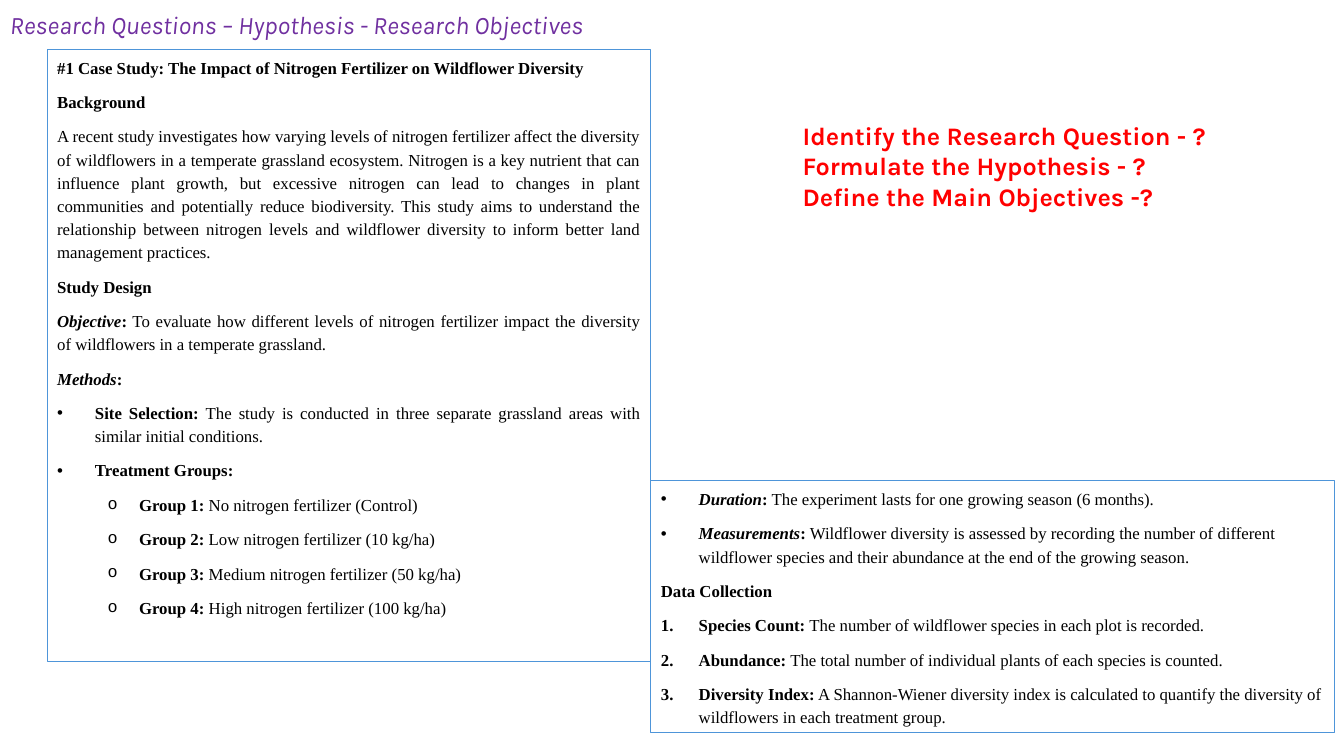
from lxml.etree import SubElement
from pptx import Presentation
from pptx.dml.color import RGBColor
from pptx.enum.shapes import MSO_SHAPE
from pptx.enum.text import MSO_ANCHOR, PP_ALIGN
from pptx.oxml.ns import qn
from pptx.util import Pt

PX = 9525
SERIF, SANS = "Times New Roman", "Karla"
STYLES = {"plain": (False, False), "bold": (True, False), "term": (True, True)}
MARKERS = {
    "dot": (36, 36, 0, "buChar", {"char": "•"}, "Arial"),
    "circle": (78, 30, 1, "buChar", {"char": "o"}, "Courier New"),
    "number": (36, 36, 0, "buAutoNum", {"type": "arabicPeriod"}, None),
}

CASE_STUDY = [
    (None, [("#1 Case Study: The Impact of Nitrogen Fertilizer on Wildflower Diversity", "bold")]),
    (None, [("Background", "bold")]),
    (None, [("A recent study investigates how varying levels of nitrogen fertilizer affect the "
             "diversity of wildflowers in a temperate grassland ecosystem. Nitrogen is a key "
             "nutrient that can influence plant growth, but excessive nitrogen can lead to changes "
             "in plant communities and potentially reduce biodiversity. This study aims to "
             "understand the relationship between nitrogen levels and wildflower diversity to "
             "inform better land management practices.", "plain")]),
    (None, [("Study Design", "bold")]),
    (None, [("Objective", "term"), (":", "bold"),
            (" To evaluate how different levels of nitrogen fertilizer impact the diversity of "
             "wildflowers in a temperate grassland.", "plain")]),
    (None, [("Methods", "term"), (":", "bold")]),
    ("dot", [("Site Selection:", "bold"),
             (" The study is conducted in three separate grassland areas with similar initial "
              "conditions.", "plain")]),
    ("dot", [("Treatment Groups:", "bold")]),
    ("circle", [("Group 1:", "bold"), (" No nitrogen fertilizer (Control)", "plain")]),
    ("circle", [("Group 2:", "bold"), (" Low nitrogen fertilizer (10 kg/ha)", "plain")]),
    ("circle", [("Group 3:", "bold"), (" Medium nitrogen fertilizer (50 kg/ha)", "plain")]),
    ("circle", [("Group 4:", "bold"), (" High nitrogen fertilizer (100 kg/ha)", "plain")]),
]

DATA_COLLECTION = [
    ("dot", [("Duration", "term"), (":", "bold"),
             (" The experiment lasts for one growing season (6 months).", "plain")]),
    ("dot", [("Measurements", "term"), (":", "bold"),
             (" Wildflower diversity is assessed by recording the number of different wildflower "
              "species and their abundance at the end of the growing season.", "plain")]),
    (None, [("Data Collection", "bold")]),
    ("number", [("Species Count:", "bold"),
                (" The number of wildflower species in each plot is recorded.", "plain")]),
    ("number", [("Abundance:", "bold"),
                (" The total number of individual plants of each species is counted.", "plain")]),
    ("number", [("Diversity Index:", "bold"),
                (" A Shannon-Wiener diversity index is calculated to quantify the diversity of "
                 "wildflowers in each treatment group.", "plain")]),
]

TASKS = [
    "Identify the Research Question - ?",
    "Formulate the Hypothesis - ?",
    "Define the Main Objectives -?",
]


def color(hex_string):
    """Turn a hex string into a colour."""
    return RGBColor.from_string(hex_string)


def scaled(box):
    """Turn a box in px into EMU."""
    return [length * PX for length in box]


def style_run(run, face, size, ink, bold=False, italic=False):
    """Set the font of one run."""
    font = run.font
    font.name, font.size, font.bold, font.italic = face, Pt(size), bold, italic
    font.color.rgb = color(ink)


def space(paragraph):
    """Give a paragraph the spacing of the body text."""
    paragraph.line_spacing = 1.15
    paragraph.space_after = Pt(8)


def mark(paragraph, marker):
    """Hang a bullet or number in front of a paragraph."""
    indent, hang, level, tag, attributes, face = MARKERS[marker]
    paragraph.level = level
    properties = paragraph._p.get_or_add_pPr()
    properties.set("marL", str(indent * PX))
    properties.set("indent", str(-hang * PX))
    if face:
        SubElement(properties, qn("a:buFont"), typeface=face)
    SubElement(properties, qn("a:" + tag), attributes)


def add_heading(slide, box):
    """Write the heading of the slide."""
    frame = slide.shapes.add_textbox(*scaled(box)).text_frame
    frame.word_wrap = True
    frame.text = "Research Questions – Hypothesis - Research Objectives"
    space(frame.paragraphs[0])
    style_run(frame.paragraphs[0].runs[0], SANS, 18, "7030A0", italic=True)


def add_panel(slide, box, entries, alignment):
    """Draw an outlined panel with its study notes."""
    panel = slide.shapes.add_shape(MSO_SHAPE.RECTANGLE, *scaled(box))
    panel.shadow.inherit = False
    panel.fill.background()
    panel.line.color.rgb = color("4E95D9")
    panel.line.width = Pt(0.75)
    frame = panel.text_frame
    frame.word_wrap = True
    frame.vertical_anchor = MSO_ANCHOR.TOP
    for index, (marker, pieces) in enumerate(entries):
        paragraph = frame.add_paragraph() if index else frame.paragraphs[0]
        paragraph.alignment = alignment
        space(paragraph)
        if marker:
            mark(paragraph, marker)
        for words, style in pieces:
            run = paragraph.add_run()
            run.text = words
            style_run(run, SERIF, 12, "000000", *STYLES[style])


def add_tasks(slide, box):
    """Write the tasks for the reader."""
    frame = slide.shapes.add_textbox(*scaled(box)).text_frame
    frame.word_wrap = True
    frame.text = "\n".join(TASKS)
    for paragraph in frame.paragraphs:
        style_run(paragraph.runs[0], SANS, 18, "FF0000", bold=True)


def main():
    """Build and save the slide."""
    deck = Presentation()
    deck.slide_width, deck.slide_height = scaled((1280, 720))
    slide = deck.slides.add_slide(deck.slide_layouts[6])
    add_heading(slide, (0, 0, 640, 41))
    add_panel(slide, (45, 47, 575, 583), CASE_STUDY, PP_ALIGN.JUSTIFY)
    add_panel(slide, (620, 458, 651, 240), DATA_COLLECTION, PP_ALIGN.LEFT)
    add_tasks(slide, (755, 110, 493, 126))
    deck.save("out.pptx")


if __name__ == "__main__":
    main()
